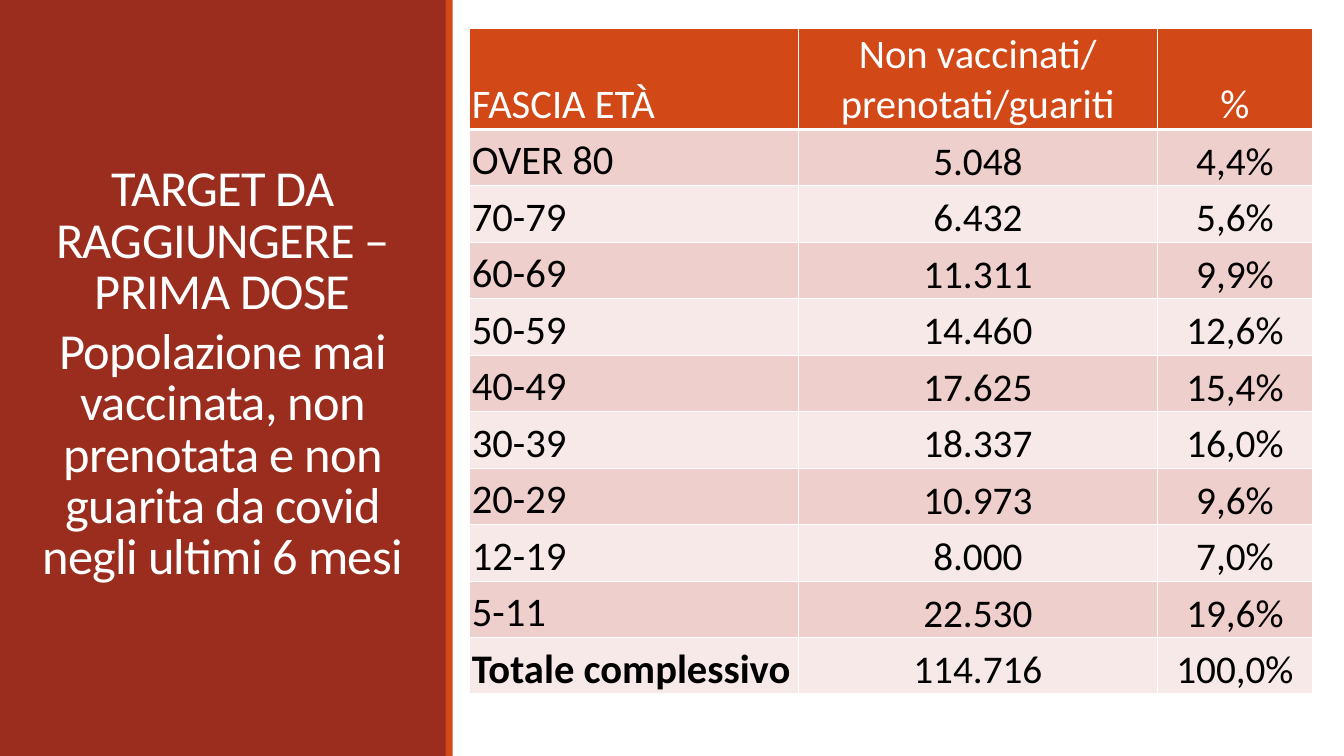
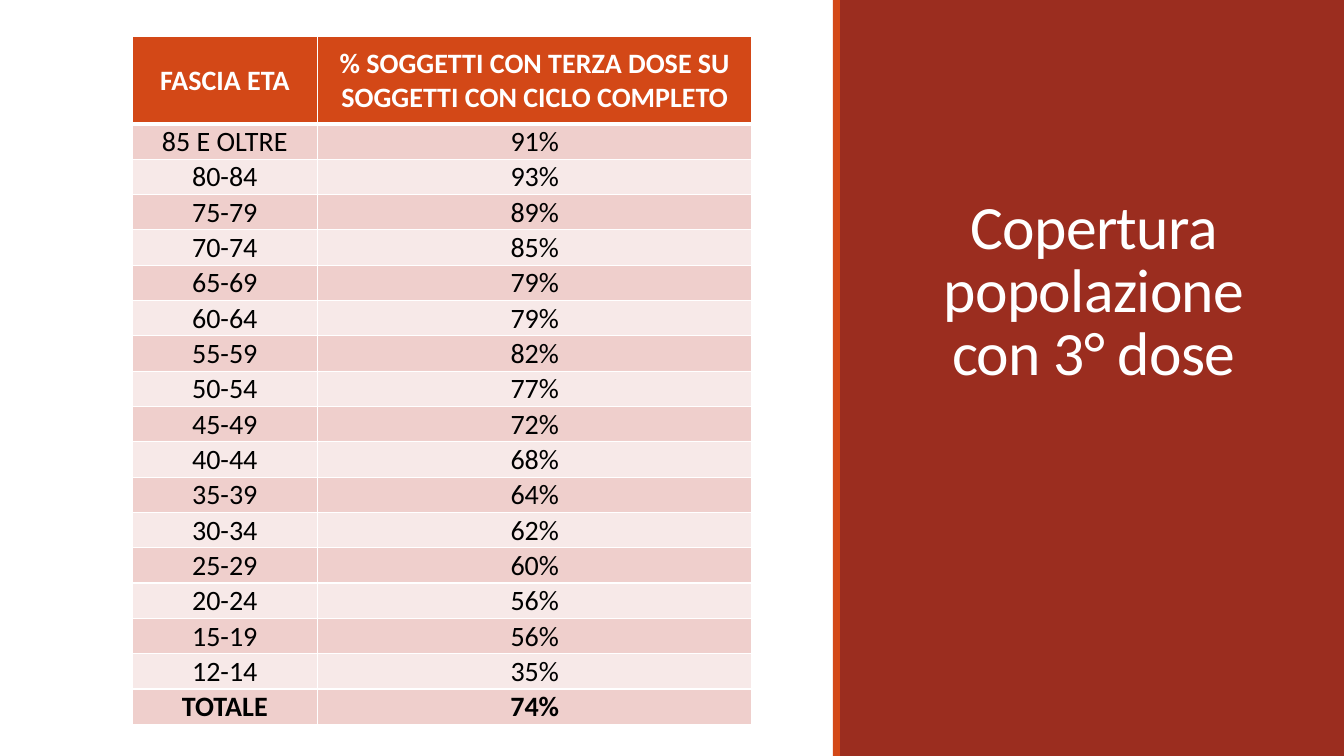
from lxml import etree
from pptx import Presentation
from pptx import util as u
from pptx.dml.color import RGBColor
from pptx.enum import shapes, text
from pptx.oxml.ns import qn

WHITE = RGBColor(0xFF, 0xFF, 0xFF)
BLACK = RGBColor(0x00, 0x00, 0x00)
BRICK = RGBColor(0x9B, 0x2D, 0x1F)
ORANGE = RGBColor(0xD3, 0x48, 0x17)
BANDS = [RGBColor(0xF7, 0xE9, 0xE8), RGBColor(0xEF, 0xCF, 0xCC)]
FONT = "Calibri"
STRIP_WIDTH = 0.53

prs = Presentation()
prs.slide_width, prs.slide_height = u.Inches(13.33), u.Inches(7.5)
COL, ROW = prs.slide_width / 100, prs.slide_height / 100  # grid of 100 x 100


def grid(left, top, width, height):
    """Turn grid columns and rows into a position and size on the slide."""
    return int(left * COL), int(top * ROW), int(width * COL), int(height * ROW)


def set_borders(cell, widths):
    """Draw white cell borders; widths maps sides L, R, T, B to points."""
    for side, points in widths.items():
        line = etree.SubElement(cell._tc.get_or_add_tcPr(), qn(f"a:ln{side}"), w=str(u.Pt(points)))
        fill = etree.SubElement(line, qn("a:solidFill"))
        etree.SubElement(fill, qn("a:srgbClr"), val=str(WHITE))


first_dose = [
    ("FASCIA ETÀ", "Non vaccinati/\nprenotati/guariti", "%"),
    ("OVER 80", "5.048", "4,4%"),
    ("70-79", "6.432", "5,6%"),
    ("60-69", "11.311", "9,9%"),
    ("50-59", "14.460", "12,6%"),
    ("40-49", "17.625", "15,4%"),
    ("30-39", "18.337", "16,0%"),
    ("20-29", "10.973", "9,6%"),
    ("12-19", "8.000", "7,0%"),
    ("5-11", "22.530", "19,6%"),
    ("Totale complessivo", "114.716", "100,0%"),
]
third_dose = [
    ("FASCIA ETA", "% SOGGETTI CON TERZA DOSE SU SOGGETTI CON CICLO COMPLETO"),
    ("85 E OLTRE", "91%"),
    ("80-84", "93%"),
    ("75-79", "89%"),
    ("70-74", "85%"),
    ("65-69", "79%"),
    ("60-64", "79%"),
    ("55-59", "82%"),
    ("50-54", "77%"),
    ("45-49", "72%"),
    ("40-44", "68%"),
    ("35-39", "64%"),
    ("30-34", "62%"),
    ("25-29", "60%"),
    ("20-24", "56%"),
    ("15-19", "56%"),
    ("12-14", "35%"),
    ("TOTALE", "74%"),
]

pages = [
    dict(
        title="TARGET DA RAGGIUNGERE – PRIMA DOSE\n"
              "Popolazione mai vaccinata, non prenotata e non guarita da covid negli ultimi 6 mesi",
        title_box=(2.25, 7.6, 28.65, 84.13), title_size=36, title_gap=6,
        title_anchor=text.MSO_ANCHOR.MIDDLE,
        panel=(0, 33.2), strip=33.15,
        data=first_dose, corner=(34.96, 3.73), columns=(24.45, 26.7, 11.55),
        header_height=13.33, row_height=7.47,
        label_size=29, value_size=28, label_align=text.PP_ALIGN.LEFT,
        label_inset=0.02, cell_anchor=text.MSO_ANCHOR.BOTTOM,
        bold_cells={(10, 0)},
    ),
    dict(
        title="Copertura popolazione con 3° dose",
        title_box=(66.38, 9.33, 30, 42.67), title_size=44, title_gap=0,
        title_anchor=text.MSO_ANCHOR.BOTTOM,
        panel=(62.5, 37.5), strip=61.97,
        data=third_dose, corner=(9.83, 4.8), columns=(13.8, 32.33),
        header_height=11.6, row_height=4.63,
        label_size=20, value_size=20, label_align=text.PP_ALIGN.CENTER,
        label_inset=0.01, cell_anchor=text.MSO_ANCHOR.MIDDLE,
        bold_cells={(0, 0), (0, 1), (17, 0), (17, 1)},
    ),
]

for page in pages:
    slide = prs.slides.add_slide(prs.slide_layouts[5])

    # Side panel with its accent strip
    for (left, width), colour in ((page["panel"], BRICK), ((page["strip"], STRIP_WIDTH), ORANGE)):
        band = slide.shapes.add_shape(shapes.MSO_SHAPE.RECTANGLE, *grid(left, 0, width, 100))
        band.shadow.inherit = False
        band.fill.solid()
        band.fill.fore_color.rgb = colour
        band.line.fill.background()

    # Title, brought in front of the panel
    title = slide.shapes.title
    slide.shapes._spTree.append(title._element)
    title.left, title.top, title.width, title.height = grid(*page["title_box"])
    frame = title.text_frame
    frame.text = page["title"]
    frame.word_wrap = True
    frame.auto_size = text.MSO_AUTO_SIZE.NONE
    frame.vertical_anchor = page["title_anchor"]
    for paragraph in frame.paragraphs:
        paragraph.alignment = text.PP_ALIGN.CENTER
        paragraph.line_spacing = 0.85
        paragraph.space_before = u.Pt(0)
        paragraph.space_after = u.Pt(page["title_gap"])
        for run in paragraph.runs:
            run.font.name, run.font.size = FONT, u.Pt(page["title_size"])
            run.font.color.rgb = WHITE
            run.font._element.set("spc", "-50")

    # Coverage table
    data, columns = page["data"], page["columns"]
    heights = [page["header_height"]] + [page["row_height"]] * (len(data) - 1)
    table = slide.shapes.add_table(
        len(data), len(columns), *grid(*page["corner"], sum(columns), sum(heights))).table
    for column, width in zip(table.columns, columns):
        column.width = int(width * COL)
    for r, (entries, height) in enumerate(zip(data, heights)):
        table.rows[r].height = int(height * ROW)
        for c, entry in enumerate(entries):
            is_header, is_label = r == 0, c == 0
            cell = table.cell(r, c)
            set_borders(cell, {"L": 1, "R": 1, "T": 3 if r == 1 else 1, "B": 3 if is_header else 1})
            cell.fill.solid()
            cell.fill.fore_color.rgb = ORANGE if is_header else BANDS[r % 2]
            cell.vertical_anchor = page["cell_anchor"]
            inset = u.Inches(page["label_inset"] if is_header or is_label else 0.01)
            cell.margin_left = cell.margin_right = cell.margin_top = inset
            cell.margin_bottom = 0
            cell.text_frame.text = entry
            for paragraph in cell.text_frame.paragraphs:
                paragraph.alignment = page["label_align"] if is_label else text.PP_ALIGN.CENTER
                for run in paragraph.runs:
                    run.font.name = FONT
                    run.font.size = u.Pt(page["label_size" if is_header or is_label else "value_size"])
                    run.font.bold = (r, c) in page["bold_cells"]
                    run.font.color.rgb = WHITE if is_header else BLACK

prs.save("out.pptx")
